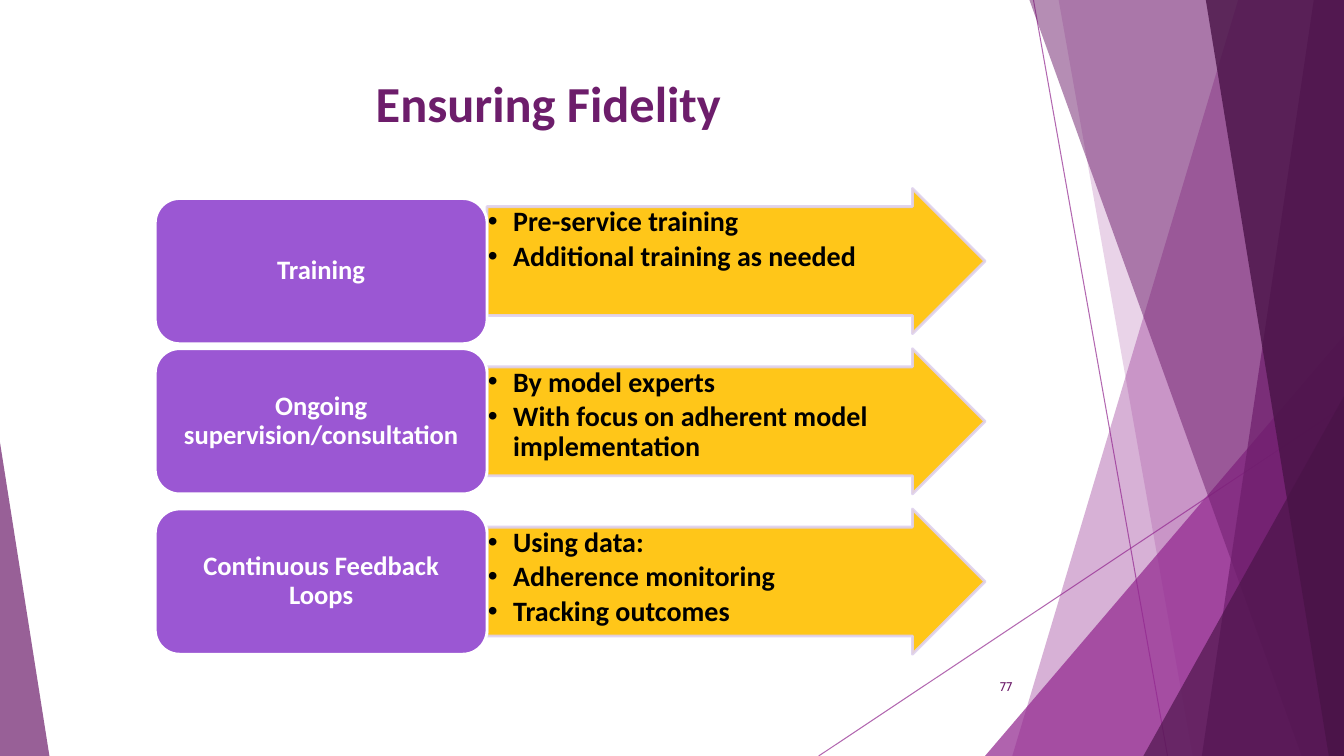
import pptx
import pptx.util
import lxml.etree as etree
from pptx.dml.color import RGBColor
from pptx.enum.shapes import MSO_CONNECTOR, MSO_SHAPE
from pptx.enum.text import MSO_ANCHOR, MSO_AUTO_SIZE, PP_ALIGN
from pptx.oxml.ns import qn

PX = 9144  # EMU per px, 100 px to the inch
WIDE, HIGH = 1333, 750

VIOLET = RGBColor(0x92, 0x27, 0x8F)
PLUM = RGBColor(0x6D, 0x1D, 0x6B)
DARK = RGBColor(0x49, 0x13, 0x47)
PURPLE = RGBColor(0x9B, 0x57, 0xD3)
LILAC = RGBColor(0xDE, 0xD1, 0xEF)
GOLD = RGBColor(0xFF, 0xC0, 0x00)
WHITE = RGBColor(0xFF, 0xFF, 0xFF)
BLACK = RGBColor(0, 0, 0)

# top x, bottom x, colour, opacity
PANES = [
    (1228, 1004, VIOLET, 36),
    (1050, 1183, VIOLET, 20),
    (1021, 1291, PLUM, 50),
    (1303, 1192, PLUM, 70),
    (1196, 1318, DARK, 80),
]
ROWS = [
    ("Training", ["Pre-service training", "Additional training as needed"]),
    ("Ongoing supervision/consultation",
     ["By model experts", "With focus on adherent model implementation"]),
    ("Continuous Feedback Loops",
     ["Using data:", "Adherence monitoring", "Tracking outcomes"]),
]


def emu(*sizes):
    return [size * PX for size in sizes]


def fade(shape, pct):
    """Set the opacity of every colour in the shape's fill and line."""
    for color in shape.element.spPr.iter(qn("a:srgbClr")):
        etree.SubElement(color, qn("a:alpha"), val=str(pct * 1000))


def paint(shape, fill, line=None):
    shape.shadow.inherit = False
    shape.fill.solid()
    shape.fill.fore_color.rgb = fill
    if line is None:
        shape.line.fill.background()
    else:
        shape.line.color.rgb = line
        shape.line.width = pptx.util.Pt(2)


def inset(frame, left, top, right, bottom):
    frame.word_wrap = True
    frame.margin_left, frame.margin_top = emu(left, top)
    frame.margin_right, frame.margin_bottom = emu(right, bottom)


def style(para, name, size, color, bold=True):
    para.font.name = name
    para.font.size = pptx.util.Pt(size)
    para.font.color.rgb = color
    para.font.bold = bold


def add_ray(shapes, *ends):
    ray = shapes.add_connector(MSO_CONNECTOR.STRAIGHT, *emu(*ends))
    ray.line.color.rgb = VIOLET
    ray.line.width = pptx.util.Pt(0.75)
    etree.SubElement(ray.element.spPr, qn("a:effectLst"))
    fade(ray, 70)


def add_pane(shapes, top, bottom, color, pct):
    """Add a facet that runs from a slanted left side to the slide's right edge."""
    form = shapes.build_freeform(top, 0, scale=PX)
    form.add_line_segments([(WIDE, 0), (WIDE, HIGH), (bottom, HIGH)], close=True)
    pane = form.convert_to_shape()
    paint(pane, color)
    fade(pane, pct)


def add_wedge(shapes, box, peak, color, pct):
    wedge = shapes.add_shape(MSO_SHAPE.ISOSCELES_TRIANGLE, *emu(*box))
    wedge.adjustments[0] = peak
    paint(wedge, color)
    fade(wedge, pct)


def add_decor(shapes):
    add_ray(shapes, 1025, 0, 1158, HIGH)
    add_ray(shapes, WIDE, 403, 812, HIGH)
    for pane in PANES[:2]:
        add_pane(shapes, *pane)
    add_wedge(shapes, (977, 333, 356, 417), 1, VIOLET, 72)
    for pane in PANES[2:]:
        add_pane(shapes, *pane)
    add_wedge(shapes, (1134, 393, 199, 357), 1, DARK, 66)
    add_wedge(shapes, (0, 439, 49, 311), 0, PLUM, 70)


def set_title(title, box):
    title.left, title.top, title.width, title.height = emu(*box)
    frame = title.text_frame
    frame.text = "Ensuring Fidelity"
    frame.auto_size = MSO_AUTO_SIZE.NONE
    frame.vertical_anchor = MSO_ANCHOR.TOP
    inset(frame, 10, 5, 10, 5)
    para = frame.paragraphs[0]
    para.alignment = PP_ALIGN.CENTER
    style(para, "Calibri", 36, PLUM)


def add_number(shapes, box):
    frame = shapes.add_textbox(*emu(*box)).text_frame
    frame.text = "77"
    frame.vertical_anchor = MSO_ANCHOR.MIDDLE
    inset(frame, 10, 5, 10, 5)
    para = frame.paragraphs[0]
    para.alignment = PP_ALIGN.RIGHT
    style(para, "Cabin", 9, PLUM, False)


def add_bullet(para):
    props = para._p.get_or_add_pPr()
    props.set("marL", str(25 * PX))
    props.set("indent", str(-25 * PX))
    etree.SubElement(props, qn("a:buFont"), typeface="Arial")
    etree.SubElement(props, qn("a:buChar"), char="•")


def add_arrow(shapes, box, items):
    arrow = shapes.add_shape(MSO_SHAPE.RIGHT_ARROW, *emu(*box))
    arrow.adjustments[0] = 0.75
    arrow.adjustments[1] = 0.5
    paint(arrow, GOLD, LILAC)
    fade(arrow, 90)
    frame = arrow.text_frame
    frame.text = "\n".join(items)
    frame.vertical_anchor = MSO_ANCHOR.TOP
    inset(frame, 1, 1, 38, 1)
    for para in frame.paragraphs:
        para.alignment = PP_ALIGN.LEFT
        para.line_spacing = 0.9
        para.space_after = pptx.util.Pt(3)
        style(para, "Calibri", 20, BLACK)
        add_bullet(para)


def add_label(shapes, box, text):
    label = shapes.add_shape(MSO_SHAPE.ROUNDED_RECTANGLE, *emu(*box))
    paint(label, PURPLE, WHITE)
    frame = label.text_frame
    frame.text = text
    frame.vertical_anchor = MSO_ANCHOR.MIDDLE
    inset(frame, 8, 4, 8, 4)
    para = frame.paragraphs[0]
    para.alignment = PP_ALIGN.CENTER
    para.line_spacing = 0.9
    style(para, "Calibri", 19, WHITE)


def add_rows(shapes, left, top, width, tall, pitch):
    split = width * 2 // 5
    for i, (text, items) in enumerate(ROWS):
        y = top + i * pitch
        drop = 10 if i == 0 else 0  # the first label sits lower than its arrow
        add_arrow(shapes, (left + split, y, width - split, tall), items)
        add_label(shapes, (left, y + drop, split, tall), text)


def main():
    deck = pptx.Presentation()
    deck.slide_width, deck.slide_height = emu(WIDE, HIGH)
    slide = deck.slides.add_slide(deck.slide_layouts.get_by_name("Title Only"))
    add_decor(slide.shapes)
    set_title(slide.shapes.title, (74, 67, 940, 144))
    add_number(slide.shapes, (939, 661, 75, 40))
    add_rows(slide.shapes, 154, 187, 823, 144, 159)
    deck.save("out.pptx")


if __name__ == "__main__":
    main()
